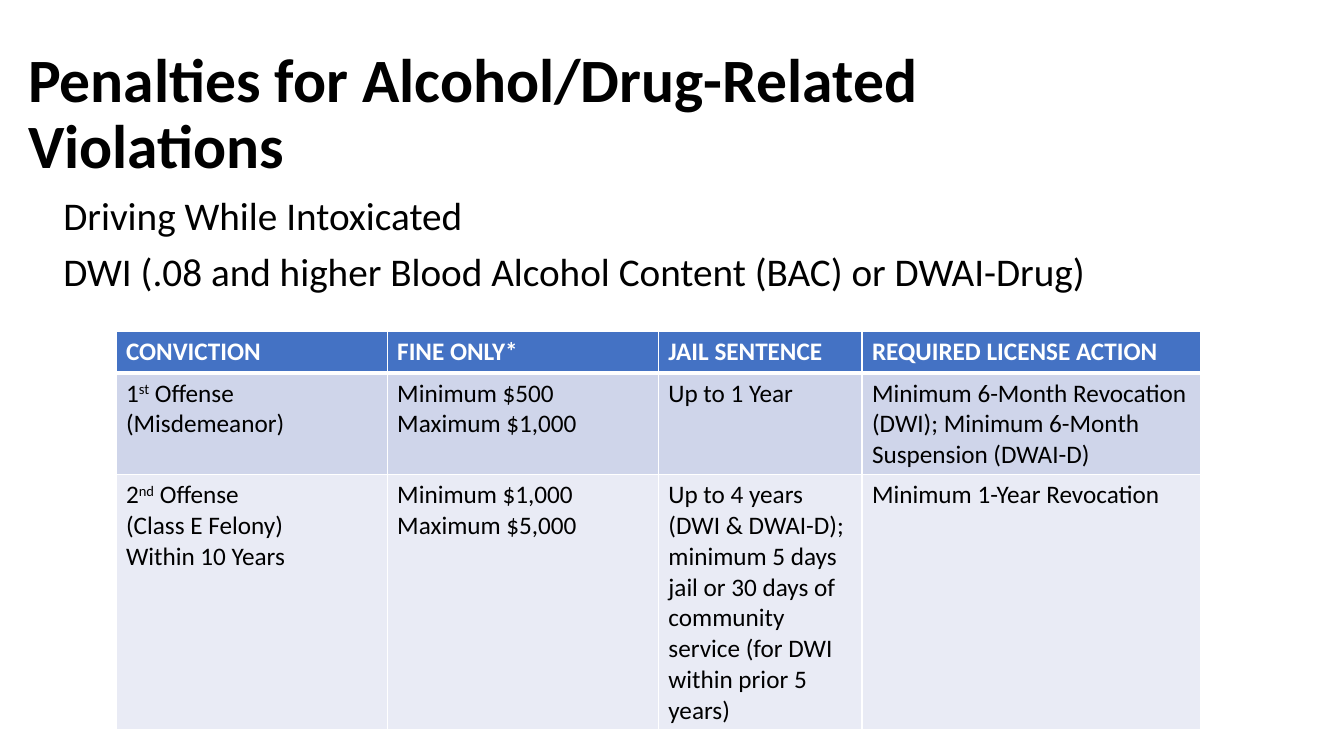
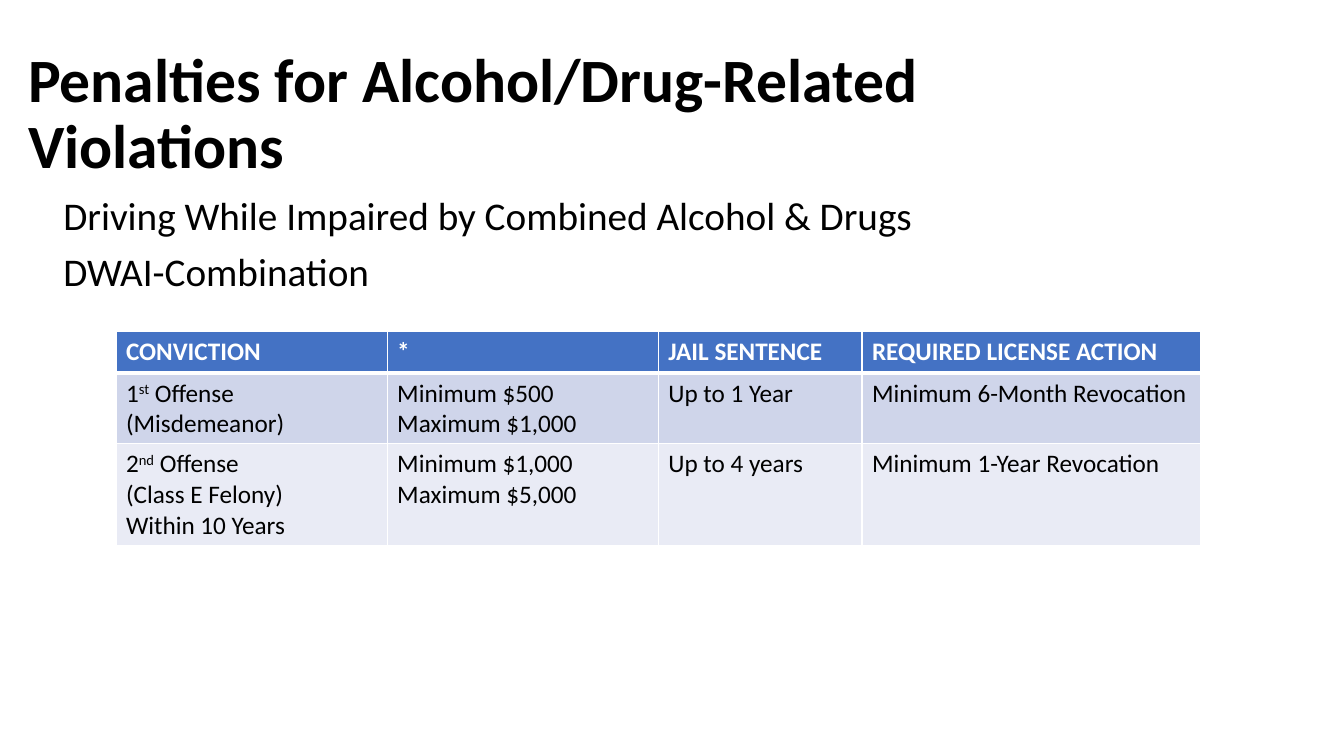
from dataclasses import dataclass

from lxml import etree
from pptx import Presentation
from pptx import util as u
from pptx.dml.color import RGBColor
from pptx.enum import text
from pptx.oxml.ns import qn


@dataclass(frozen=True)
class Theme:
    font: str = "Calibri"
    ink: str = "000000"
    paper: str = "FFFFFF"
    header: str = "4472C4"
    bands: tuple = ("CFD5EA", "E9EBF5")
    title_size: int = 44
    body_size: int = 28
    table_size: int = 18
    rule: int = 1
    header_rule: int = 3


THEME = Theme()
PX = 9144
SLIDE_SIZE = (1333, 750)
TITLE_AREA = (18, 42, 1150, 145)
BODY_AREA = (53, 190, 1208, 486)
TABLE_ORIGIN = (115, 329)
COLUMNS = (269, 269, 202, 336)

TITLE = "Penalties for Alcohol/Drug-Related Violations"
FIRST_OFFENSE = ["1^st^ Offense", "(Misdemeanor)"]
SECOND_OFFENSE = ["2^nd^ Offense", "(Class E Felony)", "Within 10 Years"]
FIRST_FINE = ["Minimum $500", "Maximum $1,000"]
SECOND_FINE = ["Minimum $1,000", "Maximum $5,000"]

SLIDES = [
    {
        "body": ["Driving While Intoxicated",
                 "DWI (.08 and higher Blood Alcohol Content (BAC) or DWAI-Drug)"],
        "fine_heading": "FINE ONLY*",
        "first": ("Up to 1 Year",
                  "Minimum 6-Month Revocation (DWI); Minimum 6-Month Suspension (DWAI-D)"),
        "second": ("Up to 4 years (DWI & DWAI-D); minimum 5 days jail or 30 days of "
                   "community service (for DWI within prior 5 years)",
                   "Minimum 1-Year Revocation"),
        "heights": (41, 101, 253),
    },
    {
        "body": ["Driving While Impaired by Combined Alcohol & Drugs",
                 "DWAI-Combination"],
        "fine_heading": "*",
        "first": ("Up to 1 Year", "Minimum 6-Month Revocation"),
        "second": ("Up to 4 years", "Minimum 1-Year Revocation"),
        "heights": (41, 70, 101),
    },
]


def px(*lengths):
    return [u.Emu(length * PX) for length in lengths]


def write(frame, lines, size, color, bold=False, line_spacing=None, gap=0):
    frame.word_wrap = True
    for index, line in enumerate(lines):
        para = frame.paragraphs[0] if index == 0 else frame.add_paragraph()
        para.line_spacing = line_spacing
        if index and gap:
            para.space_before = u.Pt(gap)
        for part, words in enumerate(line.split("^")):
            span = para.add_run()
            span.text = words
            span.font.name = THEME.font
            span.font.size = u.Pt(size)
            span.font.bold = bold
            span.font.color.rgb = RGBColor.from_string(color)
            if part % 2:
                span.font._element.set("baseline", "30000")


def add_text(page, area, lines, size, anchor, bold=False, gap=0):
    box = page.shapes.add_textbox(*px(*area))
    box.text_frame.vertical_anchor = anchor
    write(box.text_frame, lines, size, THEME.ink, bold, 0.9, gap)


def add_borders(cell, top, bottom):
    properties = cell._tc.get_or_add_tcPr()
    widths = {"lnL": THEME.rule, "lnR": THEME.rule, "lnT": top, "lnB": bottom}
    for side, width in widths.items():
        line = etree.SubElement(properties, qn(f"a:{side}"), w=str(u.Pt(width)))
        fill = etree.SubElement(line, qn("a:solidFill"))
        etree.SubElement(fill, qn("a:srgbClr"), val=THEME.paper)


def add_penalties(page, rows, heights):
    frame = page.shapes.add_table(len(rows), len(COLUMNS),
                                  *px(*TABLE_ORIGIN, sum(COLUMNS), sum(heights)))
    table = frame.table
    for column, width in zip(table.columns, px(*COLUMNS)):
        column.width = width
    for index, (row, height) in enumerate(zip(rows, px(*heights))):
        table.rows[index].height = height
        is_header = index == 0
        fill = THEME.header if is_header else THEME.bands[(index - 1) % 2]
        top = THEME.header_rule if index == 1 else THEME.rule
        bottom = THEME.header_rule if is_header else THEME.rule
        for cell, lines in zip(table.rows[index].cells, row):
            add_borders(cell, top, bottom)
            cell.fill.solid()
            cell.fill.fore_color.rgb = RGBColor.from_string(fill)
            write(cell.text_frame, lines, THEME.table_size,
                  THEME.paper if is_header else THEME.ink, is_header)


def penalty_rows(content):
    headings = ("CONVICTION", content["fine_heading"],
                "JAIL SENTENCE", "REQUIRED LICENSE ACTION")
    return [
        [[heading] for heading in headings],
        [FIRST_OFFENSE, FIRST_FINE, *([words] for words in content["first"])],
        [SECOND_OFFENSE, SECOND_FINE, *([words] for words in content["second"])],
    ]


def main():
    deck = Presentation()
    deck.slide_width, deck.slide_height = px(*SLIDE_SIZE)
    for content in SLIDES:
        page = deck.slides.add_slide(deck.slide_layouts[6])
        add_text(page, TITLE_AREA, [TITLE], THEME.title_size,
                 text.MSO_ANCHOR.MIDDLE, bold=True)
        add_text(page, BODY_AREA, content["body"], THEME.body_size,
                 text.MSO_ANCHOR.TOP, gap=10)
        add_penalties(page, penalty_rows(content), content["heights"])
    deck.save("out.pptx")


if __name__ == "__main__":
    main()
